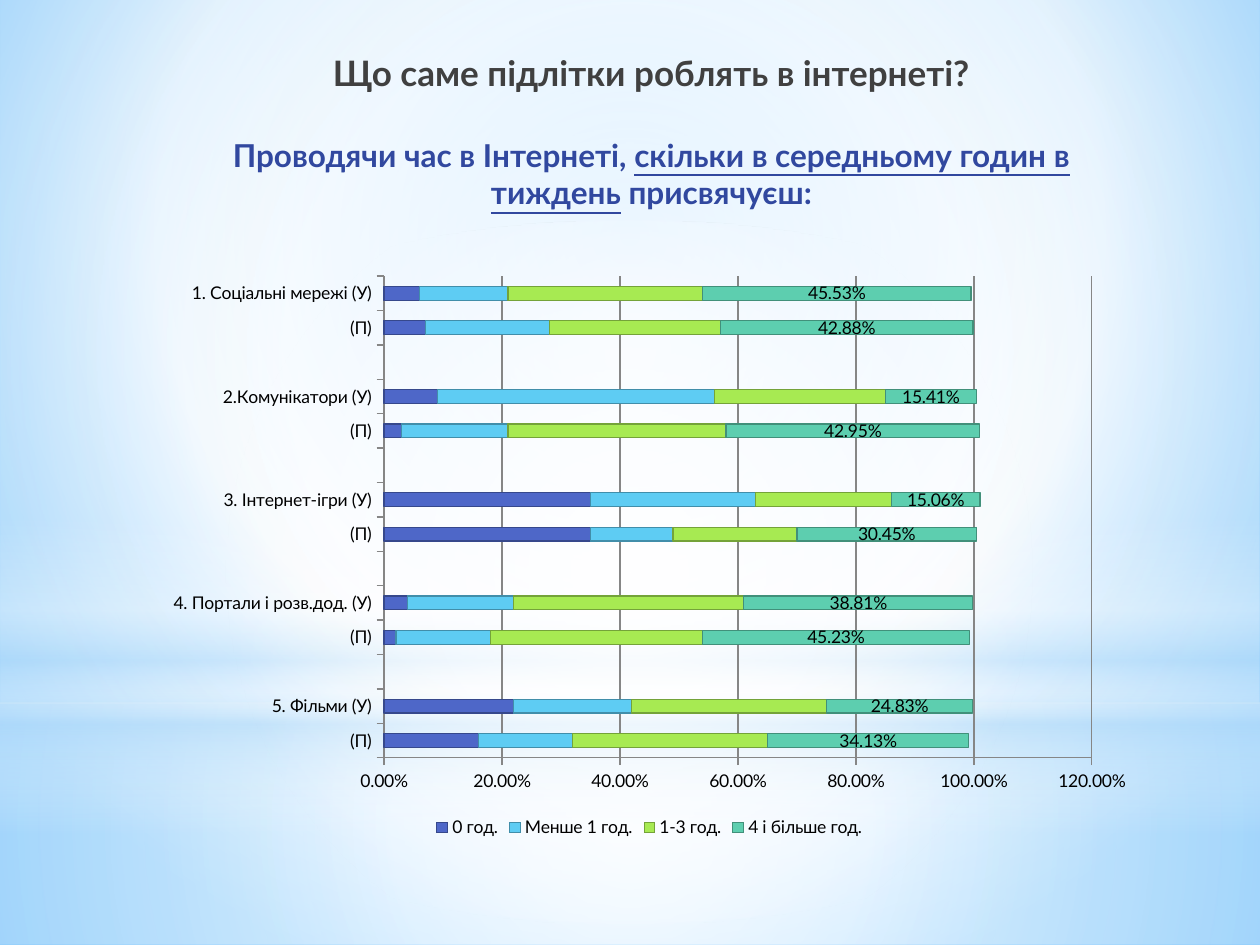
from lxml import etree
from pptx import Presentation
from pptx.chart.data import CategoryChartData
from pptx.dml.color import RGBColor
from pptx.enum import chart as ch, shapes, text
from pptx.oxml.ns import qn
from pptx.util import Inches, Pt

FONT = "Lato"
BLACK = RGBColor(0, 0, 0)
CHARCOAL = RGBColor(0x40, 0x40, 0x40)
NAVY = RGBColor(0x31, 0x48, 0x9F)
AXIS_GREY = RGBColor(0x86, 0x86, 0x86)
SERIES_COLORS = [RGBColor(0x4E, 0x67, 0xC8), RGBColor(0x5E, 0xCC, 0xF3),
                 RGBColor(0xA7, 0xEA, 0x52), RGBColor(0x5D, 0xCE, 0xAF)]
PALE_BLUE = "B4DCFA"
CENTER = (50, 50, 50, 50)


def set_gradient(properties, stops, focus=None):
    """Replace a solid fill by a radial gradient, or a vertical one without focus."""
    solid = properties.find(qn("a:solidFill"))
    grad = etree.Element(qn("a:gradFill"), rotWithShape="1")
    stop_list = etree.SubElement(grad, qn("a:gsLst"))
    for position, color, alpha in stops:
        stop = etree.SubElement(stop_list, qn("a:gs"), pos=str(position * 1000))
        rgb = etree.SubElement(stop, qn("a:srgbClr"), val=color)
        etree.SubElement(rgb, qn("a:alpha"), val=str(alpha * 1000))
    if focus:
        circle = etree.SubElement(grad, qn("a:path"), path="circle")
        sides = {side: str(value * 1000) for side, value in zip("ltrb", focus)}
        etree.SubElement(circle, qn("a:fillToRect"), **sides)
    else:
        etree.SubElement(grad, qn("a:lin"), ang="5400000", scaled="0")
    properties.replace(solid, grad)


def add_run(paragraph, content, size=18, color=NAVY, underline=False):
    run = paragraph.add_run()
    run.text = content
    run.font.name = FONT
    run.font.size = Pt(size)
    run.font.bold = True
    run.font.underline = underline
    run.font.color.rgb = color


prs = Presentation()
prs.slide_width, prs.slide_height = Inches(10), Inches(7.5)
slide = prs.slides.add_slide(prs.slide_layouts[5])

# Background
slide.background.fill.solid()
set_gradient(slide.element.find(".//" + qn("p:bgPr")),
             [(0, "9ED5FF", 100), (60, "FFFFFF", 100), (100, "5BB9FF", 100)],
             (20, 10, 20, 60))

# Translucent glow layers: preset, top, height, gradient stops, focus
RECT, OVAL = shapes.MSO_SHAPE.RECTANGLE, shapes.MSO_SHAPE.OVAL
glows = [
    (RECT, 5.58, 1.92, [(0, "FFFFFF", 91), (37, "FFFFFF", 76), (100, PALE_BLUE, 79)], CENTER),
    (RECT, 0, 5.58, [(0, "FFFFFF", 89), (48, "FFFFFF", 62), (100, PALE_BLUE, 79)], CENTER),
    (RECT, 4.12, 2.5, [(0, "FFFFFF", 0), (29, "FFFFFF", 30), (45, PALE_BLUE, 40),
                       (55, "FFFFFF", 26), (65, PALE_BLUE, 60), (100, "FFFFFF", 0)], None),
    (OVAL, 1.75, 5.58, [(0, "FFFFFF", 100), (56, "FFFFFF", 0)], CENTER),
]
for preset, top, height, stops, focus in glows:
    glow = slide.shapes.add_shape(preset, 0, Inches(top), Inches(10), Inches(height))
    glow.shadow.inherit = False
    glow.line.fill.background()
    glow.fill.solid()
    set_gradient(glow.element.spPr, stops, focus)

# Title, brought in front of the glow layers
title = slide.shapes.title
title.left, title.top = Inches(1.61), Inches(0.36)
title.width, title.height = Inches(7.12), Inches(0.71)
slide.shapes.element.append(title.element)
heading = title.text_frame
heading.word_wrap = True
heading.auto_size = text.MSO_AUTO_SIZE.NONE
heading.vertical_anchor = text.MSO_ANCHOR.TOP
topic, question = heading.paragraphs[0], heading.add_paragraph()
for line in (topic, question):
    line.alignment = text.PP_ALIGN.CENTER
question.space_before = Pt(24)
add_run(topic, "Що саме підлітки роблять в інтернеті?", size=20, color=CHARCOAL)
add_run(question, "Проводячи час в Інтернеті, ")
add_run(question, "скільки в середньому годин в тиждень", underline=True)
add_run(question, " присвячуєш:")

# Chart data, from the bottom bar up
hours = CategoryChartData(number_format="0.00%")
hours.categories = ["(П)", "5. Фільми (У)", "", "(П)", "4. Портали і розв.дод. (У)", "",
                    "(П)", "3. Інтернет-ігри (У)", "", "(П)", "2.Комунікатори (У)", "",
                    "(П)", "1. Соціальні мережі (У)"]
shares = {
    "0 год.": [0.16, 0.22, None, 0.02, 0.04, None, 0.35, 0.35, None,
               0.03, 0.09, None, 0.07, 0.06],
    "Менше 1 год.": [0.16, 0.2, None, 0.16, 0.18, None, 0.14, 0.28, None,
                     0.18, 0.47, None, 0.21, 0.15],
    "1-3 год.": [0.33, 0.33, None, 0.36, 0.39, None, 0.21, 0.23, None,
                 0.37, 0.29, None, 0.29, 0.33],
    "4 і більше год.": [0.3413, 0.2483, None, 0.4523, 0.3881, None, 0.3045, 0.1506, None,
                        0.4295, 0.1541, None, 0.4288, 0.4553],
}
for answer, values in shares.items():
    hours.add_series(answer, values)

# Stacked bar chart
chart = slide.shapes.add_chart(ch.XL_CHART_TYPE.BAR_STACKED, Inches(1.22), Inches(2.1),
                               Inches(7.87), Inches(4.59), hours).chart
chart.has_title = False
chart.font.name, chart.font.size = FONT, Pt(10)
chart.font.color.rgb = BLACK
chart.has_legend = True
chart.legend.position = ch.XL_LEGEND_POSITION.BOTTOM
chart.legend.include_in_layout = False

bars = chart.plots[0]
bars.gap_width, bars.overlap = 150, 100
bars.vary_by_categories = False
for series, color in zip(bars.series, SERIES_COLORS):
    series.format.fill.solid()
    series.format.fill.fore_color.rgb = color
    series.format.line.color.rgb = RGBColor(*(int(part * 0.7) for part in color))
    series.format.line.width = Pt(0.75)

labels = bars.series[-1].data_labels
labels.show_value = True
labels.number_format, labels.number_format_is_linked = "0.00%", False

# Axes
share_axis = chart.value_axis
share_axis.minimum_scale, share_axis.maximum_scale = 0, 1.2
share_axis.major_unit = 0.2
share_axis.has_major_gridlines = True
share_axis.major_gridlines.format.line.color.rgb = AXIS_GREY
share_axis.tick_labels.number_format = "0.00%"
share_axis.tick_labels.number_format_is_linked = False
for axis in (chart.category_axis, share_axis):
    axis.major_tick_mark = ch.XL_TICK_MARK.OUTSIDE
    axis.format.line.color.rgb = AXIS_GREY

prs.save("out.pptx")
